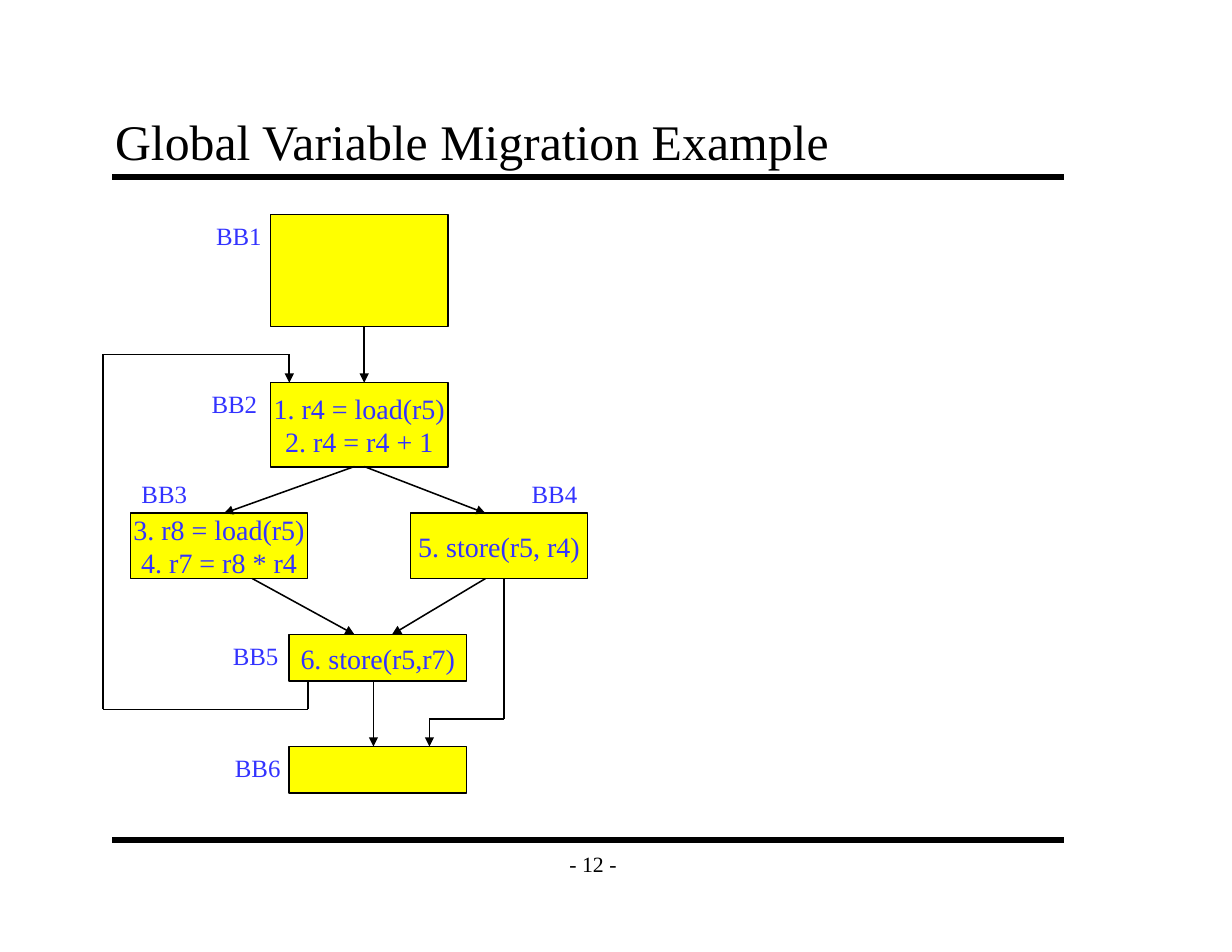
"""Builds the global variable migration slide, a flow graph of six basic blocks."""
from itertools import pairwise

from lxml import etree
from pptx import Presentation
from pptx import util as u
from pptx.dml.color import RGBColor
from pptx.enum import shapes, text
from pptx.oxml import ns

BLOCKS = [
    ("BB1", (4.65, 4.87), (6.14, 4.87, 2.54), ""),
    ("BB2", (4.55, 8.68), (6.14, 8.68, 1.91), "1. r4 = load(r5)\n2. r4 = r4 + 1"),
    ("BB3", (2.96, 10.72), (2.96, 11.64, 1.48), "3. r8 = load(r5)\n4. r7 = r8 * r4"),
    ("BB4", (11.81, 10.72), (9.31, 11.64, 1.48), "5. store(r5, r4)"),
    ("BB5", (5.03, 14.39), (6.56, 14.39, 1.06), "6. store(r5,r7)"),
    ("BB6", (5.08, 16.93), (6.56, 16.93, 1.06), ""),
]
ROUTES = [
    [(8.26, 7.41), (8.26, 8.68)],
    [(8.04, 10.58), (5.08, 11.64)],
    [(8.26, 10.58), (11.01, 11.64)],
    [(5.72, 13.12), (8.04, 14.39)],
    [(11.01, 13.12), (8.89, 14.39)],
    [(8.47, 15.45), (8.47, 16.93)],
    [(6.99, 15.45), (6.99, 16.09), (2.33, 16.09), (2.33, 8.04), (6.56, 8.04), (6.56, 8.68)],
    [(11.43, 13.12), (11.43, 16.3), (9.74, 16.3), (9.74, 16.93)],
]


def tint(code):
    return RGBColor.from_string(code)


def write(frame, words, size=18, color="3333FF", font="Times New Roman",
          align="LEFT", anchor="TOP", wrap=False, inset=(0.25, 0.13)):
    frame.word_wrap = wrap
    frame.vertical_anchor = getattr(text.MSO_ANCHOR, anchor)
    frame.margin_left = frame.margin_right = u.Cm(inset[0])
    frame.margin_top = frame.margin_bottom = u.Cm(inset[1])
    frame.text = words
    for para in frame.paragraphs:
        para.alignment = getattr(text.PP_ALIGN, align)
        for run in para.runs:
            run.font.size = u.Pt(size)
            run.font.name = font
            run.font.color.rgb = tint(color)


class Deck:
    ink, fill = "000000", "FFFF00"

    def __init__(self, slide):
        self.slide = slide

    def label(self, spot, words, **style):
        box = self.slide.shapes.add_textbox(*map(u.Cm, spot))
        write(box.text_frame, words, **style)

    def block(self, spot, words):
        box = self.slide.shapes.add_shape(shapes.MSO_SHAPE.RECTANGLE, *map(u.Cm, spot))
        box.shadow.inherit = False
        box.fill.solid()
        box.fill.fore_color.rgb = tint(self.fill)
        box.line.color.rgb = tint(self.ink)
        box.line.width = u.Pt(1)
        if words:
            write(box.text_frame, words, align="CENTER", anchor="MIDDLE")

    def line(self, start, end, width=1, arrow=False):
        link = self.slide.shapes.add_connector(
            shapes.MSO_CONNECTOR.STRAIGHT, *map(u.Cm, start + end))
        link.line.color.rgb = tint(self.ink)
        link.line.width = u.Pt(width)
        if arrow:
            etree.SubElement(link.line._get_or_add_ln(), ns.qn("a:tailEnd"), type="triangle")
        etree.SubElement(link._element.spPr, ns.qn("a:effectLst"))

    def route(self, points):
        for start, end in pairwise(points):
            self.line(start, end, arrow=end == points[-1])


def main():
    show = Presentation()
    show.slide_width, show.slide_height = u.Cm(27.94), u.Cm(21.59)
    deck = Deck(show.slides.add_slide(show.slide_layouts[6]))
    for y in (4.02, 19.05):
        deck.line((2.54, y), (24.13, y), width=4)
    deck.label((12.5, 19.05, 1.9, 1.06), "- 12 -", size=14, color=deck.ink,
               align="CENTER", anchor="MIDDLE", inset=(0.28, 0.15))
    deck.label((2.33, 2.33, 21.59, 1.69), "Global Variable Migration Example", size=32,
               color=deck.ink, anchor="BOTTOM", wrap=True, inset=(0.28, 0.15))
    for name, spot, (x, y, height), code in BLOCKS:
        deck.block((x, y, 4.02, height), code)
        deck.label(spot + (1.55, 0.94), name, size=16)
    for points in ROUTES:
        deck.route(points)
    show.save("out.pptx")


if __name__ == "__main__":
    main()
